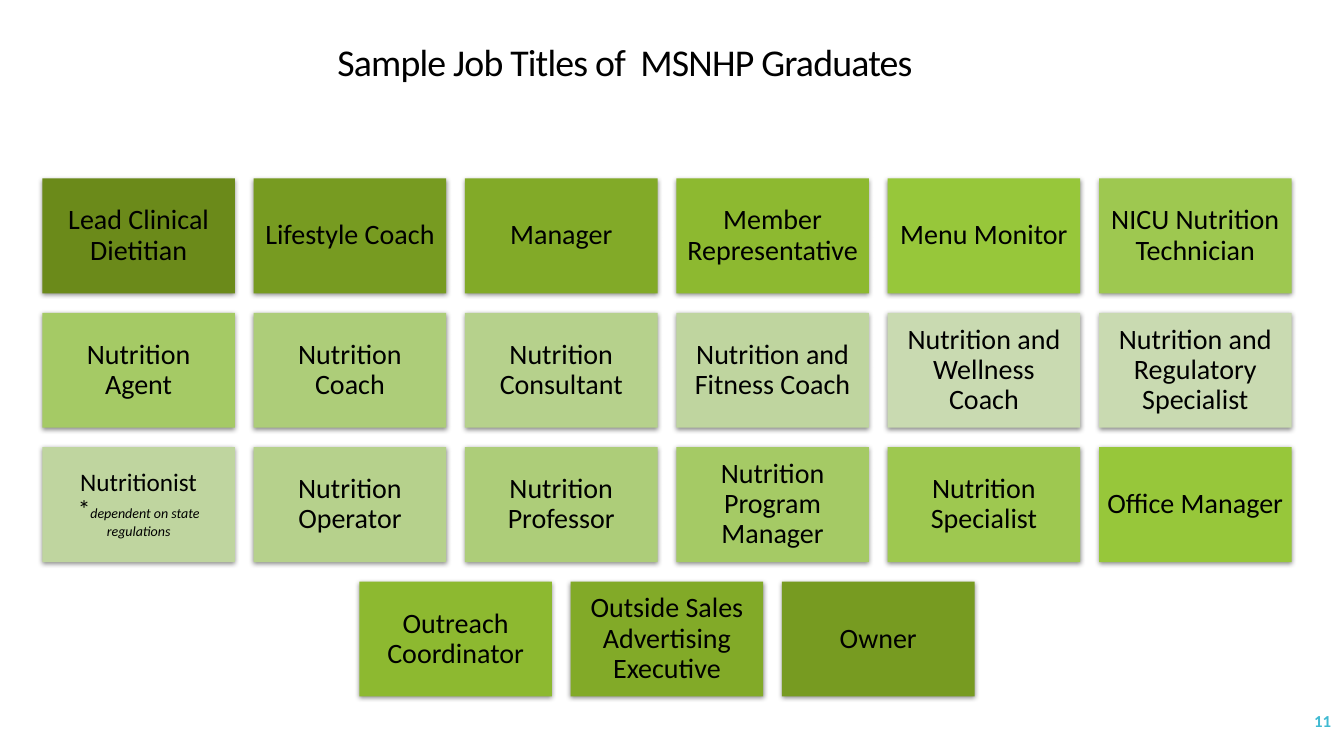
from lxml import etree
from pptx import Presentation
from pptx.dml.color import RGBColor
from pptx.enum.shapes import MSO_SHAPE
from pptx.enum.text import MSO_ANCHOR, PP_ALIGN
from pptx.oxml.ns import qn
from pptx.util import Inches, Pt

COLOURS = {"text": "000000", "number": "40BAD2", "shadow": "000000"}
GREENS = ["6B8A1A", "779B21", "82AA28", "8DB930", "97C73A", "9EC850",
          "A5CA65", "ADCD79", "B6D18C", "BFD59F", "C9DAB1"]

JOB_ROWS = [
    ["Lead Clinical Dietitian", "Lifestyle Coach", "Manager",
     "Member Representative", "Menu Monitor", "NICU Nutrition Technician"],
    ["Nutrition Agent", "Nutrition Coach", "Nutrition Consultant",
     "Nutrition and Fitness Coach", "Nutrition and Wellness Coach",
     "Nutrition and Regulatory Specialist"],
    [("Nutritionist *", "dependent on state regulations"),
     "Nutrition Operator", "Nutrition Professor", "Nutrition Program Manager",
     "Nutrition Specialist", "Office Manager"],
    ["Outreach Coordinator", "Outside Sales Advertising Executive", "Owner"],
]
COLUMNS = 6
LEFT, TOP = 0.42, 1.77
BOX_WIDTH, BOX_HEIGHT = 1.91, 1.14
COLUMN_STEP = (10.9 - LEFT) / 5
ROW_STEP = (5.77 - TOP) / 3


class JobSlide:
    font_name = "Calibri"

    def __init__(self, slide):
        self.slide = slide

    def style(self, paragraph, size, colour="text", align=PP_ALIGN.CENTER, bold=False):
        paragraph.alignment = align
        font = paragraph.font
        font.name, font.size, font.bold = self.font_name, Pt(size), bold
        font.color.rgb = RGBColor.from_string(COLOURS[colour])

    def frame(self, shape, inset):
        text_frame = shape.text_frame
        text_frame.word_wrap = True
        text_frame.vertical_anchor = MSO_ANCHOR.MIDDLE
        text_frame.margin_left = text_frame.margin_right = Inches(inset)
        text_frame.margin_top = text_frame.margin_bottom = Inches(inset)
        return text_frame.paragraphs[0]

    def text(self, content, left, top, width, height, size, **style):
        shape = self.slide.shapes.add_textbox(
            Inches(left), Inches(top), Inches(width), Inches(height))
        paragraph = self.frame(shape, 0.1)
        self.style(paragraph, size, **style)
        run = paragraph.add_run()
        run.text = content
        return paragraph, run

    def title(self, content):
        paragraph, run = self.text(content, 0, 0.4, 12.39, 0.47, 27)
        paragraph.line_spacing = 0.9
        run.font._element.set("spc", "-60")

    def shadow(self, shape):
        shape.shadow.inherit = False
        effects = shape._element.spPr.find(qn("a:effectLst"))
        outer = etree.SubElement(
            effects, qn("a:outerShdw"), blurRad=str(Pt(3.5)), dist=str(Pt(1.1)),
            dir="5400000", algn="ctr", rotWithShape="0")
        colour = etree.SubElement(outer, qn("a:srgbClr"), val=COLOURS["shadow"])
        etree.SubElement(colour, qn("a:alpha"), val="45000")

    def job_box(self, job, left, top, green):
        shape = self.slide.shapes.add_shape(
            MSO_SHAPE.RECTANGLE, Inches(left), Inches(top),
            Inches(BOX_WIDTH), Inches(BOX_HEIGHT))
        shape.fill.solid()
        shape.fill.fore_color.rgb = RGBColor.from_string(green)
        shape.line.fill.background()
        self.shadow(shape)
        has_note = isinstance(job, tuple)
        paragraph = self.frame(shape, 0.15 if has_note else 0.08)
        paragraph.line_spacing = 0.9
        self.style(paragraph, 18 if has_note else 20)
        name, note = job if has_note else (job, None)
        paragraph.add_run().text = name
        if note:
            run = paragraph.add_run()
            run.text = note
            run.font.size, run.font.italic = Pt(10), True


def main():
    presentation = Presentation()
    presentation.slide_width = Inches(13.33)
    presentation.slide_height = Inches(7.5)
    page = JobSlide(presentation.slides.add_slide(presentation.slide_layouts[6]))

    # Page number and title
    page.text("11", 11.63, 6.95, 1.67, 0.4, 12,
              colour="number", align=PP_ALIGN.RIGHT, bold=True)
    page.title("Sample Job Titles of  MSNHP Graduates")

    # Job boxes: greens run from dark to light and back, short rows are centred
    shades = iter(GREENS + GREENS[::-1])
    for row, jobs in enumerate(JOB_ROWS):
        indent = (COLUMNS - len(jobs)) / 2
        for column, job in enumerate(jobs):
            page.job_box(job, LEFT + (indent + column) * COLUMN_STEP,
                         TOP + row * ROW_STEP, next(shades))

    presentation.save("out.pptx")


if __name__ == "__main__":
    main()
